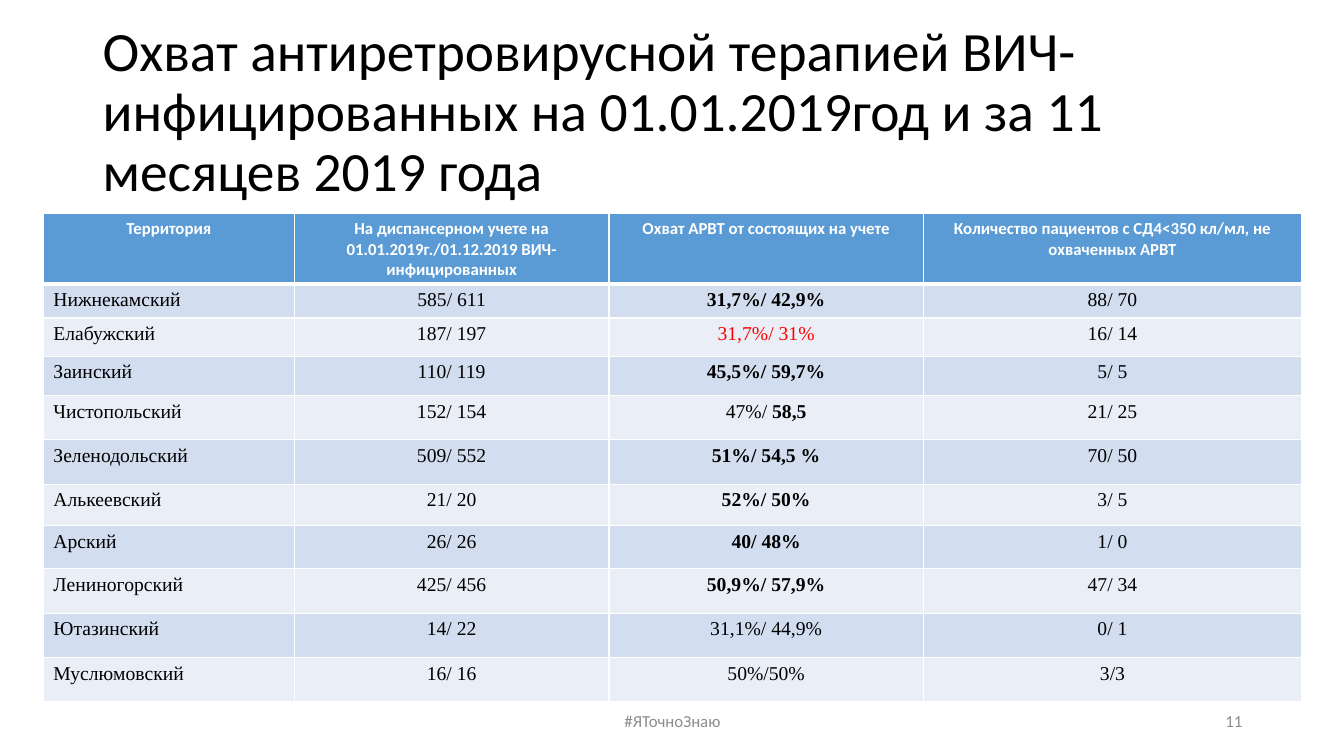
from lxml.etree import SubElement as Sub
from pptx import Presentation
from pptx.dml.color import RGBColor as Rgb
from pptx.enum.text import MSO_ANCHOR as Anchor, PP_ALIGN as Align
from pptx.oxml.ns import qn
from pptx.util import Inches, Pt

TITLE = ("Охват антиретровирусной терапией ВИЧ-инфицированных "
         "на 01.01.2019год и за 11 месяцев 2019 года")
HEADS = ["Территория",
         "На диспансерном учете на 01.01.2019г./01.12.2019 ВИЧ-инфицированных",
         "Охват АРВТ от состоящих на учете",
         "Количество пациентов с СД4<350 кл/мл, не охваченных АРВТ"]
# Text between asterisks is bold
ROWS = [
    ["Нижнекамский", "585/ 611", "*31,7%/ 42,9%*", "88/ 70"],
    ["Елабужский", "187/ 197", "31,7%/ 31%", "16/ 14"],
    ["Заинский", "110/ 119", "*45,5%/ 59,7%*", "5/ 5"],
    ["Чистопольский", "152/ 154", "47%/ *58,5*", "21/ 25"],
    ["Зеленодольский", "509/ 552", "*51%/ 54,5 %*", "70/ 50"],
    ["Алькеевский", "21/ 20", "*52%/ 50%*", "3/ 5"],
    ["Арский", "26/ 26", "*40/ 48%*", "1/ 0"],
    ["Лениногорский", "425/ 456", "*50,9%/ 57,9%*", "47/ 34"],
    ["Ютазинский", "14/ 22", "31,1%/ 44,9%", "0/ 1"],
    ["Муслюмовский", "16/ 16", "50%/50%", "3/3"],
]
WIDTHS = [2.49, 3.12, 3.12, 3.75]
HEIGHTS = [0.61, 0.33, 0.38, 0.39, 0.44, 0.44, 0.41, 0.43, 0.44, 0.44, 0.44]
ALERT = (2, 2)  # row and column of the falling coverage
BLUE, BANDS, WHITE = "5B9BD5", ["EAEFF7", "D2DEEF"], "FFFFFF"

BIG = {"name": "Calibri", "size": Pt(39.6)}
SMALL = {"name": "Calibri", "size": Pt(12)}
HEAD = {"name": "Calibri", "size": Pt(12), "bold": True}
BODY = {"name": "Times New Roman", "size": Pt(14)}


def color(code):
    return Rgb.from_string(code)


def add_run(para, text, style, code):
    run = para.add_run()
    run.text = text
    for key, value in style.items():
        setattr(run.font, key, value)
    run.font.color.rgb = color(code)
    return run


def add_text(slide, box, text, style, code, align):
    shape = slide.shapes.add_textbox(*map(Inches, box))
    frame = shape.text_frame
    frame.word_wrap = True
    frame.vertical_anchor = Anchor.MIDDLE
    para = frame.paragraphs[0]
    para.alignment = align
    add_run(para, text, style, code)
    return para


def add_edges(cell, bottom):
    props = cell._tc.get_or_add_tcPr()
    for side, width in zip("LRTB", (1, 1, 1, bottom)):
        line = Sub(props, qn(f"a:ln{side}"), w=str(Pt(width)))
        fill = Sub(line, qn("a:solidFill"))
        Sub(fill, qn("a:srgbClr"), val=WHITE)


def fill_cell(cell, text, style, code, back, align, bottom):
    add_edges(cell, bottom)
    cell.fill.solid()
    cell.fill.fore_color.rgb = color(back)
    para = cell.text_frame.paragraphs[0]
    para.alignment = align
    for i, part in enumerate(text.split("*")):
        if part:
            run = add_run(para, part, style, code)
            run.font.bold = style.get("bold", False) or i % 2 == 1


def add_grid(slide):
    box = map(Inches, (0.43, 2.12, sum(WIDTHS), sum(HEIGHTS)))
    table = slide.shapes.add_table(len(HEIGHTS), len(WIDTHS), *box).table
    for col, width in zip(table.columns, WIDTHS):
        col.width = Inches(width)
    for row, height in zip(table.rows, HEIGHTS):
        row.height = Inches(height)
    for r, texts in enumerate([HEADS] + ROWS):
        for c, text in enumerate(texts):
            cell = table.cell(r, c)
            if r == 0:
                fill_cell(cell, text, HEAD, WHITE, BLUE, Align.CENTER, 3)
            else:
                code = "FF0000" if (r, c) == ALERT else "000000"
                align = Align.CENTER if c else Align.LEFT
                fill_cell(cell, text, BODY, code, BANDS[r % 2], align, 1)


def main():
    deck = Presentation()
    deck.slide_width, deck.slide_height = Inches(13.33), Inches(7.5)
    slide = deck.slides.add_slide(deck.slide_layouts[6])

    # Title
    title = add_text(slide, (0.92, 0.4, 11.5, 1.45), TITLE, BIG, "000000",
                     Align.LEFT)
    title.line_spacing = 0.9

    # Footer and page number
    add_text(slide, (4.42, 6.95, 4.5, 0.4), "#ЯТочноЗнаю", SMALL, "8C8C8C",
             Align.CENTER)
    add_text(slide, (9.42, 6.95, 3, 0.4), "11", SMALL, "8C8C8C", Align.RIGHT)

    # Coverage by territory
    add_grid(slide)
    deck.save("out.pptx")


if __name__ == "__main__":
    main()
